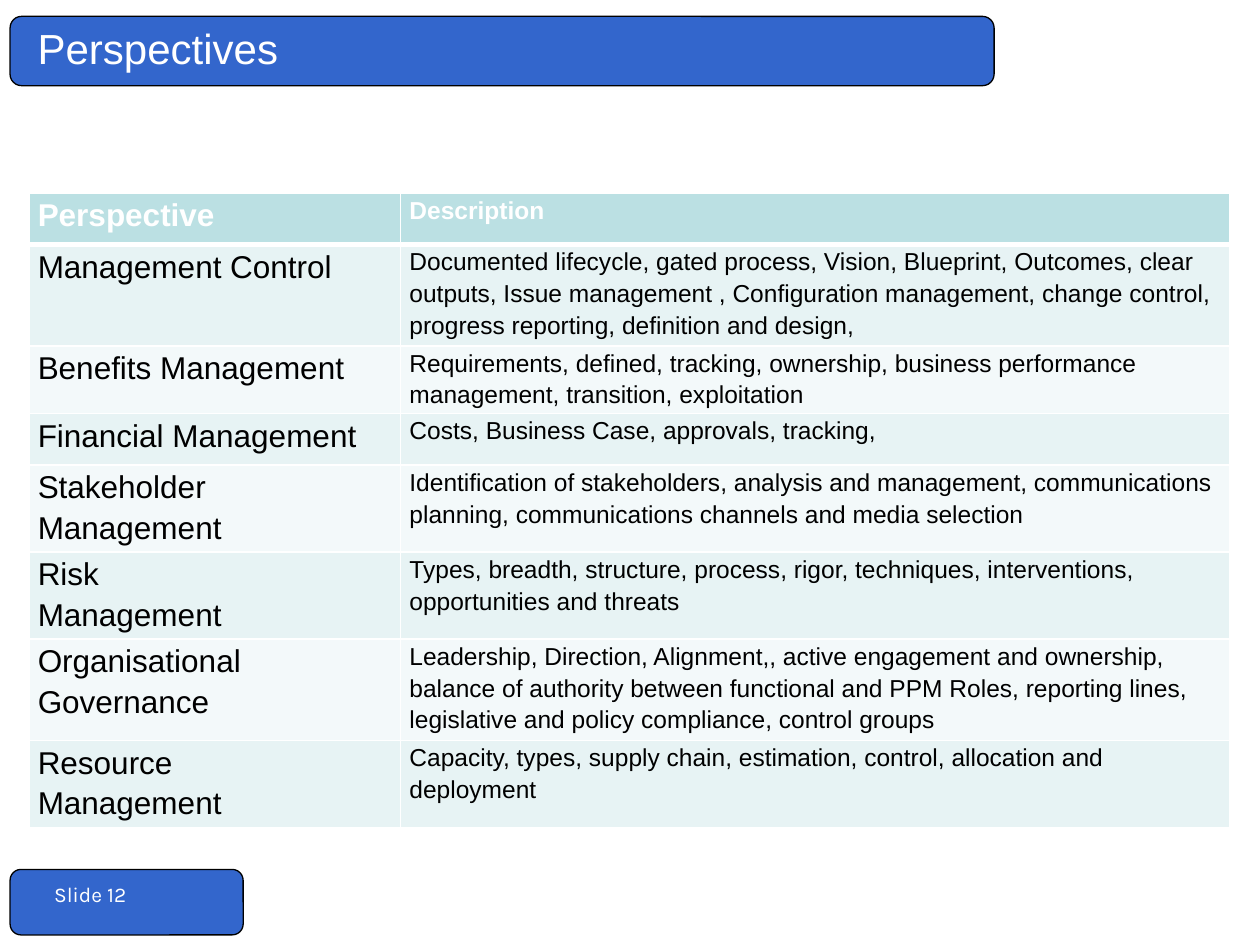
from typing import NamedTuple

from lxml.etree import SubElement
from pptx import Presentation
from pptx.dml.color import RGBColor
from pptx.enum.shapes import MSO_SHAPE as Shape
from pptx.enum.text import MSO_ANCHOR as Anchor
from pptx.oxml.ns import qn
from pptx.util import Inches, Pt

WHITE = RGBColor(0xFF, 0xFF, 0xFF)
BLACK = RGBColor(0, 0, 0)
BLUE = RGBColor(0x33, 0x66, 0xCC)
HEADER_TEAL = RGBColor(0xBB, 0xE0, 0xE3)
BANDS = (RGBColor(0xF3, 0xF9, 0xFA), RGBColor(0xE7, 0xF3, 0xF4))

COLUMN_WIDTHS = (2.95, 6.58)
COLUMN_SIZES = (18, 14)
ROW_HEIGHT = 0.41


class Area(NamedTuple):
    left: float
    top: float
    width: float
    height: float

    def emu(self) -> list[int]:
        return [Inches(value) for value in self]


class Perspective(NamedTuple):
    name: str
    description: str


BARS = (Area(0.08, 0.13, 7.81, 0.55), Area(0.08, 6.9, 1.85, 0.52))

ROWS = (
    Perspective("Perspective", "Description"),
    Perspective("Management Control",
                "Documented lifecycle, gated process, Vision, Blueprint, Outcomes, "
                "clear outputs, Issue management , Configuration management, change "
                "control, progress reporting, definition and design,"),
    Perspective("Benefits Management",
                "Requirements, defined, tracking, ownership, business performance "
                "management, transition, exploitation"),
    Perspective("Financial Management", "Costs, Business Case, approvals, tracking,"),
    Perspective("Stakeholder\nManagement",
                "Identification of stakeholders, analysis and management, "
                "communications planning, communications channels and media selection"),
    Perspective("Risk\nManagement",
                "Types, breadth, structure, process, rigor, techniques, "
                "interventions, opportunities and threats"),
    Perspective("Organisational Governance",
                "Leadership, Direction, Alignment,, active engagement and ownership, "
                "balance of authority between functional and PPM Roles, reporting "
                "lines, legislative and policy compliance, control groups"),
    Perspective("Resource\nManagement",
                "Capacity, types, supply chain, estimation, control, allocation and "
                "deployment"),
)


def add_run(para, text: str, size: int, color: RGBColor,
            font: str = "Arial", bold: bool = False) -> None:
    run = para.add_run()
    run.text = text
    run.font.size = Pt(size)
    run.font.name = font
    run.font.bold = bold
    run.font.color.rgb = color


def add_bar(slide, area: Area) -> None:
    bar = slide.shapes.add_shape(Shape.ROUNDED_RECTANGLE, *area.emu())
    bar.shadow.inherit = False
    bar.fill.solid()
    bar.fill.fore_color.rgb = BLUE
    bar.line.color.rgb = BLACK
    bar.line.width = Pt(0.75)


def add_label(slide, area: Area, text: str, size: int, font: str,
              anchor: Anchor, left_inset: float, top_inset: float) -> None:
    frame = slide.shapes.add_textbox(*area.emu()).text_frame
    frame.word_wrap = True
    frame.vertical_anchor = anchor
    frame.margin_left = Inches(left_inset)
    frame.margin_top = Inches(top_inset)
    add_run(frame.paragraphs[0], text, size, WHITE, font)


def set_borders(cell, top: float, bottom: float) -> None:
    """Draw white borders, 1 pt at the sides; call before filling the cell."""
    properties = cell._tc.get_or_add_tcPr()
    for side, width in (("L", 1), ("R", 1), ("T", top), ("B", bottom)):
        line = SubElement(properties, qn(f"a:ln{side}"), w=str(Pt(width)))
        fill = SubElement(line, qn("a:solidFill"))
        SubElement(fill, qn("a:srgbClr"), val=str(WHITE))


def fill_cell(cell, text: str, row: int, size: int) -> None:
    header = row == 0
    set_borders(cell, top=3 if row == 1 else 1, bottom=3 if header else 1)
    cell.fill.solid()
    cell.fill.fore_color.rgb = HEADER_TEAL if header else BANDS[row % 2]
    cell.margin_left = cell.margin_right = Inches(0.07)
    cell.margin_top = cell.margin_bottom = 0
    frame = cell.text_frame
    for index, line in enumerate(text.split("\n")):
        para = frame.add_paragraph() if index else frame.paragraphs[0]
        para.line_spacing = 1.15
        add_run(para, line, size, WHITE if header else BLACK, bold=header)


def add_perspectives_table(slide) -> None:
    area = Area(0.23, 1.53, sum(COLUMN_WIDTHS), ROW_HEIGHT * len(ROWS))
    table = slide.shapes.add_table(len(ROWS), len(COLUMN_WIDTHS), *area.emu()).table
    for column, width in zip(table.columns, COLUMN_WIDTHS):
        column.width = Inches(width)
    for row, perspective in enumerate(ROWS):
        table.rows[row].height = Inches(ROW_HEIGHT)
        for column, text in enumerate(perspective):
            fill_cell(table.cell(row, column), text, row, COLUMN_SIZES[column])


def main() -> None:
    deck = Presentation()
    deck.slide_width, deck.slide_height = Inches(10), Inches(7.5)
    slide = deck.slides.add_slide(deck.slide_layouts[6])
    for area in BARS:
        add_bar(slide, area)
    add_label(slide, Area(0, 6.9, 1.38, 0.37), "Slide 12", 12, "Karla",
              Anchor.TOP, left_inset=0.43, top_inset=0.1)
    add_perspectives_table(slide)
    add_label(slide, Area(0.2, 0, 7.62, 0.76), "Perspectives", 24, "Arial",
              Anchor.MIDDLE, left_inset=0.1, top_inset=0.05)
    deck.save("out.pptx")


if __name__ == "__main__":
    main()
